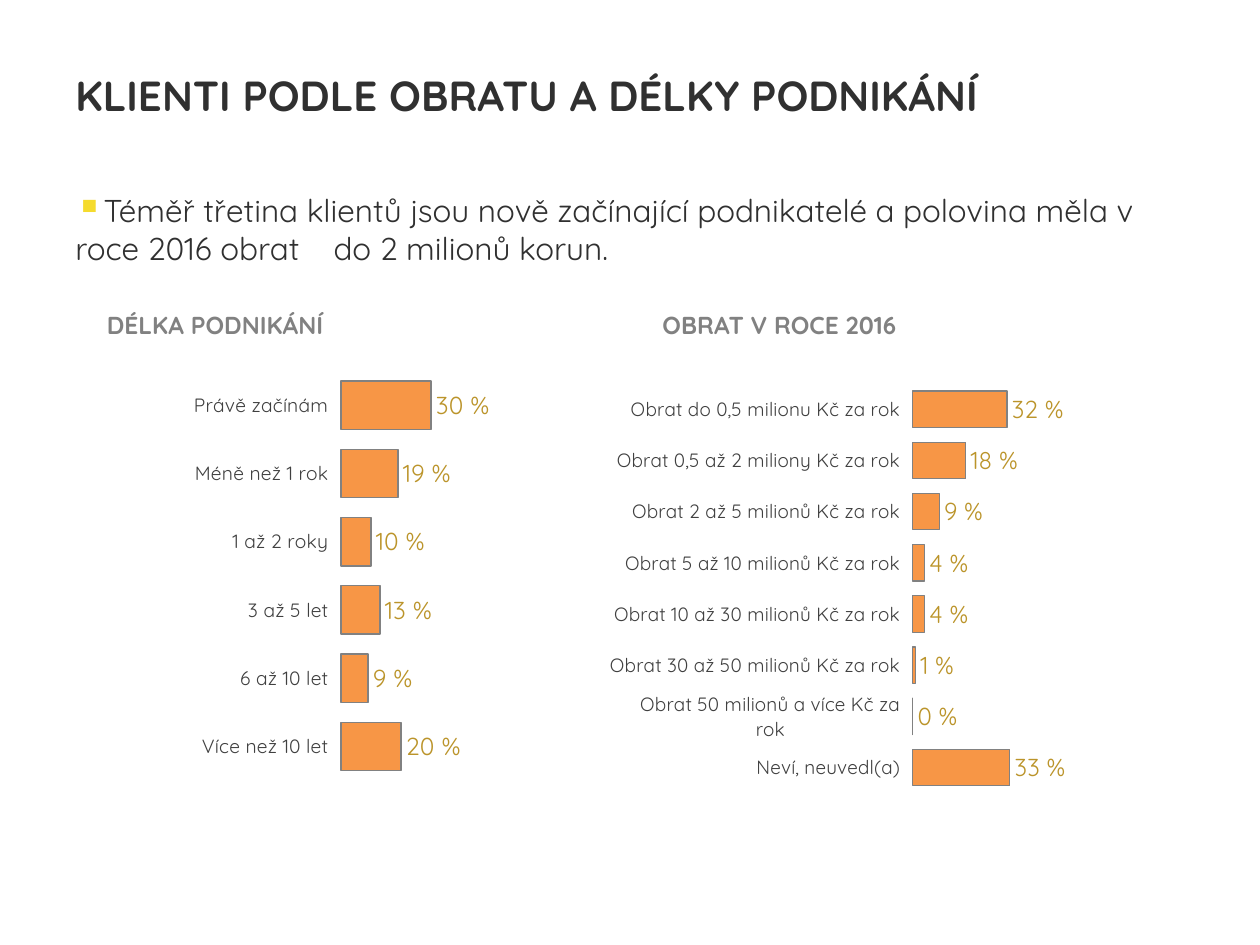
from lxml import etree
from pptx import Presentation
from pptx.chart.data import CategoryChartData
from pptx.dml.color import RGBColor
from pptx.enum.chart import XL_CHART_TYPE, XL_LABEL_POSITION, XL_TICK_LABEL_POSITION, XL_TICK_MARK
from pptx.enum.text import MSO_ANCHOR
from pptx.oxml.ns import qn
from pptx.util import Pt

BAR = XL_CHART_TYPE.BAR_CLUSTERED
OUTSIDE = XL_LABEL_POSITION.OUTSIDE_END
LOW = XL_TICK_LABEL_POSITION.LOW
NO_TICK = XL_TICK_MARK.NONE
MIDDLE, TOP = MSO_ANCHOR.MIDDLE, MSO_ANCHOR.TOP

FONT = "Quicksand"
COLORS = {
    "ink": "303030",
    "axis": "404040",
    "gray": "818181",
    "bar": "F79646",
    "label": "BB942A",
    "bullet": "F5DB2E",
}
# Plot area as fractions of the chart box
PLOT = {"x": 0.479, "y": 0.046, "w": 0.484, "h": 0.908}

TERMS = [
    ("Právě začínám", 30),
    ("Méně než 1 rok", 19),
    ("1 až 2 roky", 10),
    ("3 až 5 let", 13),
    ("6 až 10 let", 9),
    ("Více než 10 let", 20),
]
SALES = [
    ("Obrat do 0,5 milionu Kč za rok", 32),
    ("Obrat 0,5 až 2 miliony Kč za rok", 18),
    ("Obrat 2 až 5 milionů Kč za rok", 9),
    ("Obrat 5 až 10 milionů Kč za rok", 4),
    ("Obrat 10 až 30 milionů Kč za rok", 4),
    ("Obrat 30 až 50 milionů Kč za rok", 1),
    ("Obrat 50 milionů a více Kč za rok", 0),
    ("Neví, neuvedl(a)", 33),
]


def rgb(name):
    return RGBColor.from_string(COLORS[name])


def style(font, size, color, bold=False):
    font.name = FONT
    font.size = Pt(size)
    font.bold = bold
    font.color.rgb = rgb(color)


def add_text(slide, box, text, size, color, bold=False, anchor=TOP):
    frame = slide.shapes.add_textbox(*map(Pt, box)).text_frame
    frame.word_wrap = True
    frame.vertical_anchor = anchor
    para = frame.paragraphs[0]
    run = para.add_run()
    run.text = text
    style(run.font, size, color, bold)
    return para


def add_bullet(para, tab):
    """Square bullet with a hanging indent and one tab stop."""
    props = para._p.get_or_add_pPr()
    props.set("marL", "0")
    props.set("indent", str(-Pt(27)))
    tint = etree.SubElement(props, qn("a:buClr"))
    etree.SubElement(tint, qn("a:srgbClr"), val=COLORS["bullet"])
    etree.SubElement(props, qn("a:buSzPct"), val="120000")
    etree.SubElement(props, qn("a:buChar"), char="▪")
    tabs = etree.SubElement(props, qn("a:tabLst"))
    etree.SubElement(tabs, qn("a:tab"), pos=str(Pt(tab)), algn="l")


def set_plot(chart):
    """Fix the inner plot area inside the chart box."""
    area = chart._chartSpace.chart.plotArea
    for old in area.findall(qn("c:layout")):
        area.remove(old)
    layout = etree.Element(qn("c:layout"))
    area.insert(0, layout)
    manual = etree.SubElement(layout, qn("c:manualLayout"))
    etree.SubElement(manual, qn("c:layoutTarget"), val="inner")
    for key in "xy":
        etree.SubElement(manual, qn(f"c:{key}Mode"), val="edge")
    for key, part in PLOT.items():
        etree.SubElement(manual, qn(f"c:{key}"), val=str(part))


def add_bars(slide, box, rows):
    data = CategoryChartData()
    data.categories = [name for name, _ in rows]
    data.add_series("Series 1", [share for _, share in rows])
    chart = slide.shapes.add_chart(BAR, *map(Pt, box), data).chart
    chart.has_legend = False
    chart.has_title = False
    style(chart.font, 10, "ink")
    set_plot(chart)

    # Axes
    cats = chart.category_axis
    cats.reverse_order = True
    cats.major_tick_mark = NO_TICK
    cats.tick_label_position = LOW
    cats.format.line.fill.background()
    style(cats.tick_labels.font, 11, "axis")
    vals = chart.value_axis
    vals.minimum_scale, vals.maximum_scale = 0, 100
    vals.has_major_gridlines = False
    vals.visible = False

    # Bars and their labels
    plot = chart.plots[0]
    plot.gap_width = 41
    plot.vary_by_categories = False
    bars = plot.series[0].format
    bars.fill.solid()
    bars.fill.fore_color.rgb = rgb("bar")
    bars.line.color.rgb = rgb("gray")
    bars.line.width = Pt(0.75)
    plot.has_data_labels = True
    labels = plot.data_labels
    labels.show_value = True
    labels.number_format = '0" %"'
    labels.number_format_is_linked = False
    labels.position = OUTSIDE
    style(labels.font, 14, "label")


def add_head(slide, box):
    left, top, width, height = box
    add_text(slide, (left, top, 607.7, 45.4),
             "KLIENTI PODLE OBRATU A DÉLKY PODNIKÁNÍ", 24, "ink", True, MIDDLE)
    lead = add_text(slide, (left, top + 74.1, width, height - 74.1),
                    "Téměř třetina klientů jsou nově začínající podnikatelé "
                    "a polovina měla v roce 2016 obrat\tdo 2 milionů korun.",
                    18, "ink")
    add_bullet(lead, 147.5)


def add_panel(slide, box, title, inset, drop, rows):
    """A heading with a bar chart below it."""
    left, top, width, height = box
    add_text(slide, (left + inset, top, 198.7, 24.5), title, 14, "gray", True)
    add_bars(slide, (left, top + drop, width, height), rows)


def main():
    deck = Presentation()
    deck.slide_width, deck.slide_height = Pt(720), Pt(540)
    slide = deck.slides.add_slide(deck.slide_layouts[6])
    add_head(slide, (36, 31.7, 630, 493.9))
    add_panel(slide, (25.2, 173.5, 354.2, 257.8),
              "DÉLKA PODNIKÁNÍ", 28.8, 26.7, TERMS)
    add_panel(slide, (348.5, 173.5, 354.2, 257.8),
              "OBRAT V ROCE 2016", 23, 33.9, SALES)
    deck.save("out.pptx")


if __name__ == "__main__":
    main()
